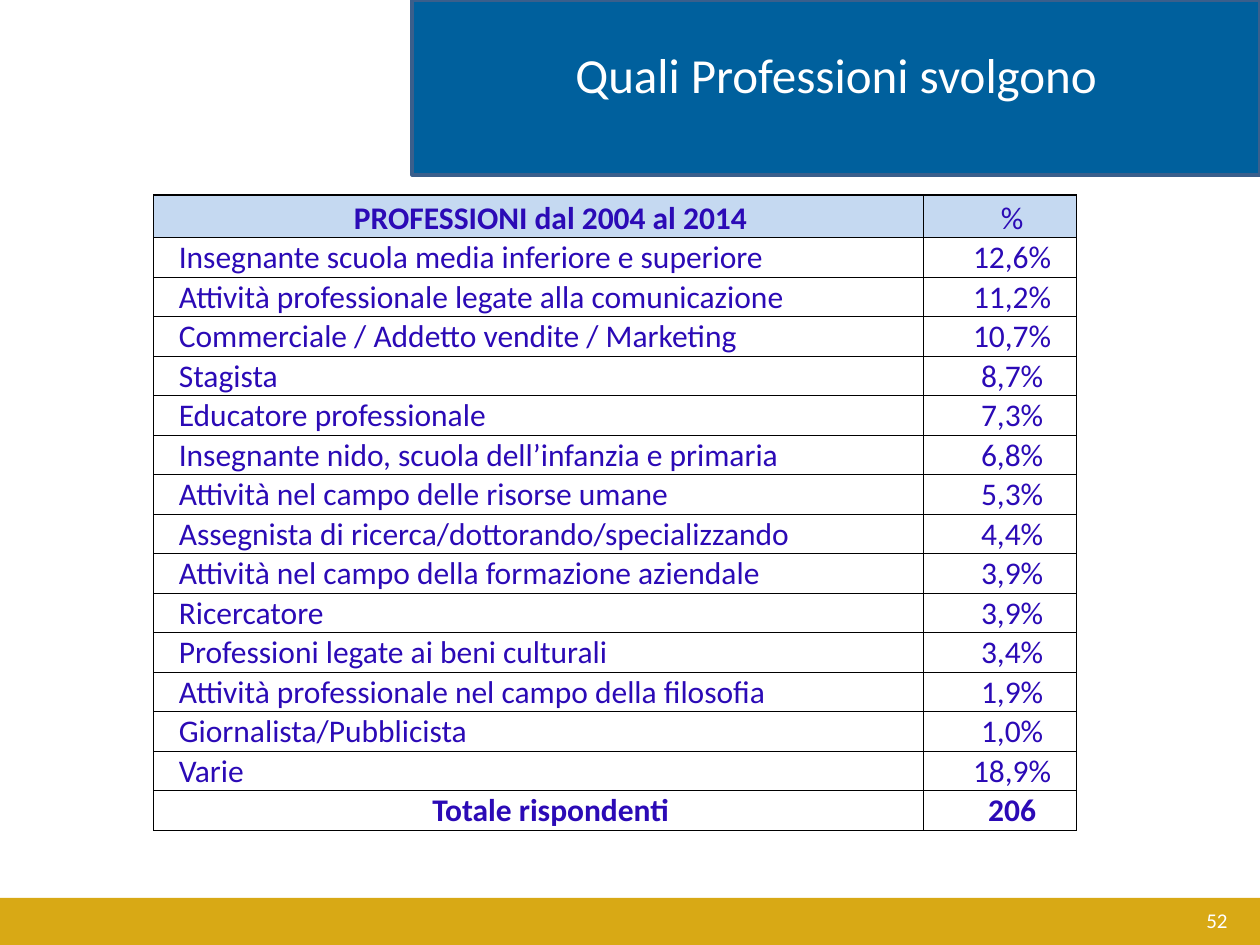
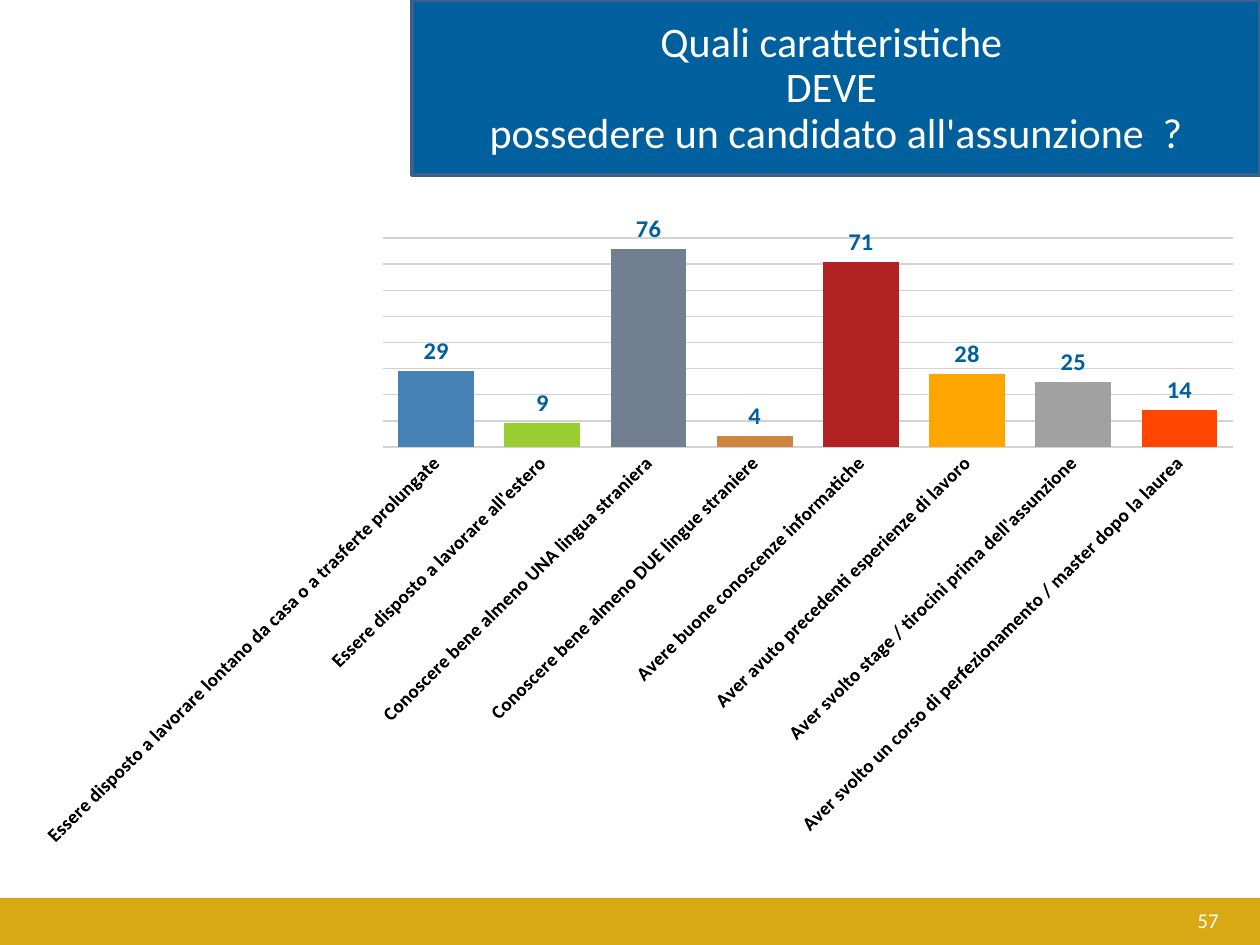
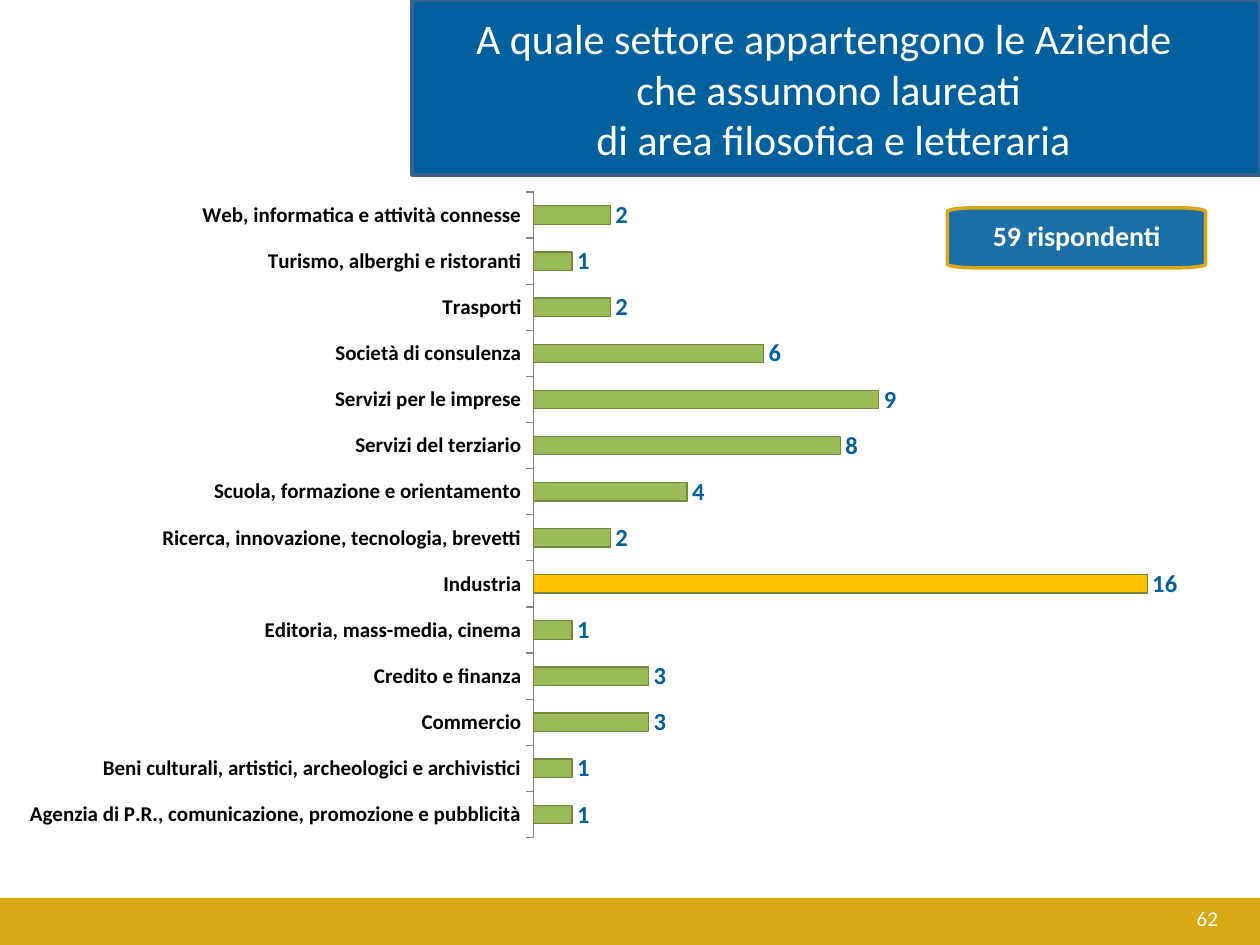
from math import cos, pi, sin

from pptx import Presentation
from pptx.chart.data import CategoryChartData
from pptx.dml.color import RGBColor
from pptx.enum.chart import XL_CHART_TYPE, XL_LABEL_POSITION, XL_TICK_LABEL_POSITION, XL_TICK_MARK
from pptx.enum.shapes import MSO_SHAPE
from pptx.enum.text import MSO_ANCHOR, MSO_AUTO_SIZE, PP_ALIGN
from pptx.oxml import parse_xml
from pptx.oxml.ns import nsdecls
from pptx.util import Pt

COLORS = {
    "white": "FFFFFF", "black": "000000", "blue": "00609D", "edge": "3A5F8C",
    "gold": "D8A915", "table text": "2B0AB6", "table head": "C5D9F1",
    "grid": "D3D3D3", "axis": "868686", "green": "9BBB59",
    "green edge": "71893F", "amber": "FFC000", "steel": "4682B4",
    "lime": "9ACD32", "slate": "708090", "copper": "CD853F",
    "brick": "B22222", "orange": "FFA500", "grey": "A1A1A1", "red": "FF4500",
}

PROFESSIONS = [
    ("PROFESSIONI dal 2004 al 2014", "%"),
    ("Insegnante scuola media inferiore e superiore", "12,6%"),
    ("Attività professionale legate alla comunicazione", "11,2%"),
    ("Commerciale / Addetto vendite / Marketing", "10,7%"),
    ("Stagista", "8,7%"),
    ("Educatore professionale", "7,3%"),
    ("Insegnante nido, scuola dell’infanzia e primaria", "6,8%"),
    ("Attività nel campo delle risorse umane", "5,3%"),
    ("Assegnista di ricerca/dottorando/specializzando", "4,4%"),
    ("Attività nel campo della formazione aziendale", "3,9%"),
    ("Ricercatore", "3,9%"),
    ("Professioni legate ai beni culturali", "3,4%"),
    ("Attività professionale nel campo della filosofia", "1,9%"),
    ("Giornalista/Pubblicista", "1,0%"),
    ("Varie", "18,9%"),
    ("Totale rispondenti", "206"),
]

SKILLS = [
    ("Essere disposto a lavorare lontano da casa o a trasferte prolungate", 29),
    ("Essere disposto a lavorare all'estero", 9),
    ("Conoscere bene almeno UNA lingua straniera", 76),
    ("Conoscere bene almeno DUE lingue straniere", 4),
    ("Avere buone conoscenze informatiche", 71),
    ("Aver avuto precedenti esperienze di lavoro", 28),
    ("Aver svolto stage / tirocini prima dell'assunzione", 25),
    ("Aver svolto un corso di perfezionamento / master dopo la laurea", 14),
]
SKILL_COLORS = ["steel", "lime", "slate", "copper", "brick", "orange", "grey", "red"]

SECTORS = [
    ("Agenzia di P.R., comunicazione, promozione e pubblicità", 1),
    ("Beni culturali, artistici, archeologici e archivistici", 1),
    ("Commercio", 3),
    ("Credito e finanza", 3),
    ("Editoria, mass-media, cinema", 1),
    ("Industria", 16),
    ("Ricerca, innovazione, tecnologia, brevetti", 2),
    ("Scuola, formazione e orientamento", 4),
    ("Servizi del terziario", 8),
    ("Servizi per le imprese", 9),
    ("Società di consulenza", 6),
    ("Trasporti", 2),
    ("Turismo, alberghi e ristoranti", 1),
    ("Web, informatica e attività connesse", 2),
]


def rgb(name):
    return RGBColor.from_string(COLORS[name])


class Deck:
    font = "Calibri"

    def __init__(self):
        self.prs = Presentation()
        self.prs.slide_width, self.prs.slide_height = Pt(720), Pt(540)
        self.layout = self.prs.slide_layouts[5]
        self.s = None

    def set_font(self, font, size, color, bold=False):
        font.name, font.size, font.bold = self.font, Pt(size), bold
        font.color.rgb = rgb(color)

    def put_text(self, tf, text, size, color, align, bold=False, spacing=None):
        tf.text = text
        for p in tf.paragraphs:
            p.alignment = align
            if spacing:
                p.line_spacing = spacing
            for r in p.runs:
                self.set_font(r.font, size, color, bold)

    def paint(self, sp, fill, line=None):
        sp.shadow.inherit = False
        sp.fill.solid()
        sp.fill.fore_color.rgb = rgb(fill)
        if line:
            sp.line.color.rgb = rgb(line)
            sp.line.width = Pt(2)
        else:
            sp.line.fill.background()

    def slide(self, title, box, size, number, number_box, anchor=MSO_ANCHOR.TOP, spacing=None):
        self.s = self.prs.slides.add_slide(self.layout)
        sp = self.s.shapes.title
        sp.left, sp.top, sp.width, sp.height = map(Pt, box)
        tf = sp.text_frame
        self.put_text(tf, title, size, "white", PP_ALIGN.CENTER, spacing=spacing)
        tf.word_wrap, tf.auto_size = True, MSO_AUTO_SIZE.NONE
        tf.vertical_anchor = anchor
        tf = self.s.shapes.add_textbox(*map(Pt, number_box)).text_frame
        tf.word_wrap, tf.vertical_anchor = True, MSO_ANCHOR.MIDDLE
        self.put_text(tf, number, 12, "white", PP_ALIGN.RIGHT)

    def rectangle(self, box, fill, line=None):
        sp = self.s.shapes.add_shape(MSO_SHAPE.RECTANGLE, *map(Pt, box))
        self.paint(sp, fill, line)
        return sp

    def layout_bands(self):
        bands = [
            self.rectangle((0, 513, 720, 27), "gold"),
            self.rectangle((235.5, 0, 484.5, 100), "blue", "edge"),
        ]
        for i, sp in enumerate(bands):
            self.layout.shapes.element.insert(2 + i, sp.element)

    def cell(self, cell, text, align, bold, fill):
        cell.margin_left, cell.margin_right = Pt(14.4), Pt(0.7)
        cell.margin_top, cell.margin_bottom = Pt(0.7), Pt(0)
        cell.vertical_anchor = MSO_ANCHOR.BOTTOM
        self.put_text(cell.text_frame, text, 18, "table text", align, bold)
        cell.fill.solid()
        cell.fill.fore_color.rgb = rgb(fill)

    def table(self, rows, box, widths, head_height, row_height):
        frame = self.s.shapes.add_table(len(rows), len(widths), *map(Pt, box))
        table = frame.table
        table.first_row = table.horz_banding = False
        for column, width in zip(table.columns, widths):
            column.width = Pt(width)
        last = len(rows) - 1
        for i, row in enumerate(rows):
            table.rows[i].height = Pt(row_height if i else head_height)
            for j, text in enumerate(row):
                inner = 0 < i < last
                align = PP_ALIGN.LEFT if inner and j == 0 else PP_ALIGN.CENTER
                bold = not inner and text != "%"
                self.cell(table.cell(i, j), text, align, bold, "white" if i else "table head")
        for tcPr in frame.element.xpath(".//a:tcPr"):
            for i, side in enumerate("LRTB"):
                tcPr.insert(i, parse_xml(
                    f'<a:ln{side} {nsdecls("a")} w="{Pt(0.75)}"><a:solidFill>'
                    f'<a:srgbClr val="{COLORS["black"]}"/></a:solidFill></a:ln{side}>'))

    def chart(self, kind, rows, box, gap, maximum, axis_size, fill):
        data = CategoryChartData(number_format="0")
        data.categories = [name for name, _ in rows]
        data.add_series("Series 1", [value for _, value in rows])
        chart = self.s.shapes.add_chart(kind, *map(Pt, box), data).chart
        chart.has_legend = chart.has_title = False
        self.set_font(chart.font, axis_size, "black")
        self.set_font(chart.category_axis.tick_labels.font, axis_size, "black", True)
        axis = chart.value_axis
        axis.visible = axis.has_major_gridlines = False
        axis.minimum_scale, axis.maximum_scale = 0, maximum
        plot = chart.plots[0]
        plot.gap_width, plot.vary_by_categories = gap, False
        plot.has_data_labels = True
        labels = plot.data_labels
        labels.show_value, labels.position = True, XL_LABEL_POSITION.OUTSIDE_END
        self.set_font(labels.font, 14, "blue", True)
        self.bar_fill(plot.series[0].format, fill)
        return chart

    def bar_fill(self, bar, color, line=None):
        bar.fill.solid()
        bar.fill.fore_color.rgb = rgb(color)
        if line:
            bar.line.color.rgb = rgb(line)
            bar.line.width = Pt(0.75)

    def column_chart(self, rows, colors, box):
        chart = self.chart(XL_CHART_TYPE.COLUMN_CLUSTERED, rows, box, 40, 80, 11, colors[0])
        for i, color in enumerate(colors):
            self.bar_fill(chart.plots[0].series[0].points[i].format, color)
        axis = chart.value_axis
        axis.major_unit, axis.has_major_gridlines = 10, True
        axis.major_gridlines.format.line.color.rgb = rgb("grid")
        axis.major_gridlines.format.line.width = Pt(1)
        axis = chart.category_axis
        axis.major_tick_mark = XL_TICK_MARK.INSIDE
        axis.format.line.fill.background()
        chart.element.xpath(".//c:catAx/c:txPr/a:bodyPr")[0].set("rot", "-2700000")

    def bar_chart(self, rows, highlight, box, inner):
        chart = self.chart(XL_CHART_TYPE.BAR_CLUSTERED, rows, box, 150, 18, 12, "green")
        series = chart.plots[0].series[0]
        self.bar_fill(series.format, "green", "green edge")
        self.bar_fill(series.points[highlight].format, "amber", "green edge")
        axis = chart.category_axis
        axis.major_tick_mark = XL_TICK_MARK.OUTSIDE
        axis.tick_label_position = XL_TICK_LABEL_POSITION.LOW
        axis.format.line.color.rgb = rgb("axis")
        area = chart.element.xpath("c:chart/c:plotArea")[0]
        for layout in area.xpath("c:layout"):
            area.remove(layout)
        places = "".join(f'<c:{key} val="{value}"/>' for key, value in zip("xywh", inner))
        area.insert(0, parse_xml(
            f'<c:layout {nsdecls("c")}><c:manualLayout><c:layoutTarget val="inner"/>'
            f'<c:xMode val="edge"/><c:yMode val="edge"/>{places}</c:manualLayout></c:layout>'))

    def callout(self, text, box, rx, ry):
        x, y, w, h = box
        corners = [(x + w - rx, y + h - ry), (x + rx, y + h - ry),
                   (x + rx, y + ry), (x + w - rx, y + ry)]
        points = []
        for i, (cx, cy) in enumerate(corners):
            for step in range(9):
                angle = (i + step / 8) * pi / 2
                points.append((Pt(cx + rx * cos(angle)), Pt(cy + ry * sin(angle))))
        builder = self.s.shapes.build_freeform(*points[0])
        builder.add_line_segments(points[1:], close=True)
        sp = builder.convert_to_shape()
        self.paint(sp, "blue", "gold")
        color = sp.element.xpath("p:spPr/a:solidFill/a:srgbClr")[0]
        color.append(parse_xml(f'<a:alpha {nsdecls("a")} val="90000"/>'))
        tf = sp.text_frame
        tf.word_wrap, tf.vertical_anchor = True, MSO_ANCHOR.MIDDLE
        self.put_text(tf, text, 16, "white", PP_ALIGN.CENTER, True, 0.9)


def main():
    deck = Deck()

    deck.slide("Quali Professioni svolgono", (235.5, 21.6, 484.5, 55.5), 28,
               "52", (540.5, 511, 168, 29))
    deck.table(PROFESSIONS, (87.8, 111.4, 527.5, 363), (440, 87.5), 24.5, 22.57)

    deck.slide("Quali caratteristiche \nDEVE \npossedere un candidato all'assunzione  ?",
               (235.5, 2, 484.5, 98), 24, "57", (535.5, 511, 168, 29),
               MSO_ANCHOR.MIDDLE, 0.9)
    deck.column_chart(SKILLS, SKILL_COLORS, (10, 122.4, 708.5, 368.6))

    deck.slide("A quale settore appartengono le Aziende \nche assumono laureati\n"
               " di area filosofica e letteraria",
               (241, 3.6, 465, 94.3), 24, "62", (535, 510, 168, 29))
    deck.bar_chart(SECTORS, 5, (14.4, 105.8, 692, 396.7), (0.42, 0.01, 0.57, 0.93))
    deck.callout("59 rispondenti", (541.4, 118.8, 147.6, 34.2), 14.5, 2.2)

    deck.layout_bands()
    deck.prs.save("out.pptx")


if __name__ == "__main__":
    main()
